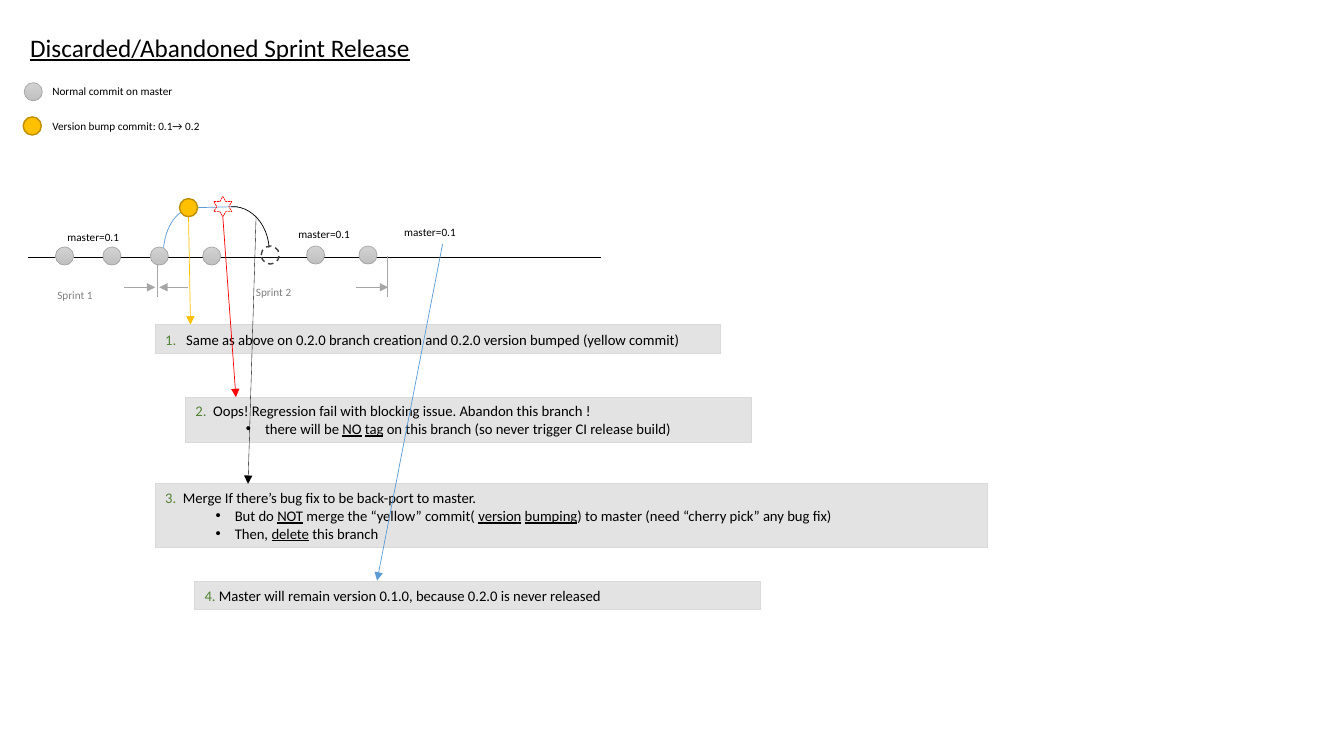
from pptx import Presentation
from pptx.dml.color import RGBColor
from pptx.enum.dml import MSO_LINE
from pptx.enum.shapes import MSO_CONNECTOR, MSO_SHAPE
from pptx.enum.text import MSO_ANCHOR, MSO_AUTO_SIZE, PP_ALIGN
from pptx.oxml.ns import qn
from pptx.util import Inches, Pt
from lxml.etree import SubElement

BLACK = RGBColor(0x00, 0x00, 0x00)
GRAY = RGBColor(0x80, 0x80, 0x80)
DARK = RGBColor(0x40, 0x40, 0x40)
MARK = RGBColor(0xA6, 0xA6, 0xA6)
RIM = RGBColor(0xA5, 0xA5, 0xA5)
LIGHT = RGBColor(0xD2, 0xD2, 0xD2)
SHADE = RGBColor(0xC0, 0xC0, 0xC0)
PANEL = RGBColor(0xCD, 0xCD, 0xCD)
EDGE = RGBColor(0xD9, 0xD9, 0xD9)
YELLOW = RGBColor(0xFF, 0xC0, 0x00)
AMBER = RGBColor(0xBD, 0x8E, 0x00)
BLUE = RGBColor(0x5B, 0x9B, 0xD5)
RED = RGBColor(0xFF, 0x00, 0x00)
GREEN = RGBColor(0x54, 0x82, 0x35)

deck = Presentation()
deck.slide_width, deck.slide_height = Inches(13.33), Inches(7.5)
slide = deck.slides.add_slide(deck.slide_layouts[5])
shapes = slide.shapes


def write(para, text, size, color=BLACK):
    """Add runs to a paragraph; words between underscores are underlined."""
    for i, part in enumerate(text.split("_")):
        if part:
            run = para.add_run()
            run.text = part
            run.font.name = "Calibri"
            run.font.size = Pt(size)
            run.font.color.rgb = color
            run.font.underline = i % 2 == 1


def draw(kind, box, color, width):
    """Add an unfilled outline shape without shadow."""
    shape = shapes.add_shape(kind, *map(Inches, box))
    shape.shadow.inherit = False
    shape.fill.background()
    shape.line.color.rgb = color
    shape.line.width = Pt(width)
    return shape


# Title
title = shapes.title
title.left, title.top = Inches(0.2), Inches(0.27)
title.width, title.height = Inches(4.29), Inches(0.4)
title.text_frame.vertical_anchor = MSO_ANCHOR.TOP
title.text_frame.auto_size = MSO_AUTO_SIZE.SHAPE_TO_FIT_TEXT
head = title.text_frame.paragraphs[0]
head.alignment = PP_ALIGN.LEFT
write(head, "_Discarded/Abandoned Sprint Release_", 18)

# Numbered steps: left, top, width, height, number, lines
steps = [
    (1.54, 3.22, 5.61, 0.29, "1.", [
        "   Same as above on 0.2.0 branch creation and 0.2.0 version bumped (yellow commit)"]),
    (1.84, 3.94, 5.61, 0.45, "2.  ", [
        "Oops! Regression fail with blocking issue. Abandon this branch !",
        "there will be _NO_ _tag_ on this branch (so never trigger CI release build)"]),
    (1.54, 4.8, 8.25, 0.63, "3. ", [
        " Merge If there’s bug fix to be back-port to master.",
        "But do _NOT_ merge the “yellow” commit( _version_ _bumping_) to master "
        "(need “cherry pick” any bug fix)",
        "Then, _delete_ this branch"]),
    (1.93, 5.77, 5.61, 0.28, "4. ", [
        "Master will remain version 0.1.0, because 0.2.0 is never released"]),
]
for *box, number, lines in steps:
    panel = draw(MSO_SHAPE.RECTANGLE, box, EDGE, 0.75)
    panel.fill.solid()
    panel.fill.fore_color.rgb = PANEL
    tint = panel.fill._xPr.find(".//" + qn("a:srgbClr"))
    SubElement(tint, qn("a:alpha"), val="54000")
    frame = panel.text_frame
    frame.word_wrap = True
    frame.auto_size = MSO_AUTO_SIZE.SHAPE_TO_FIT_TEXT
    for i, line in enumerate(lines):
        para = frame.add_paragraph() if i else frame.paragraphs[0]
        para.alignment = PP_ALIGN.LEFT
        if i:
            props = para._p.get_or_add_pPr()
            props.set("marL", str(Inches(0.69)))
            props.set("indent", str(Inches(-0.19)))
            SubElement(props, qn("a:buFont"), typeface="Arial")
            SubElement(props, qn("a:buChar"), char="•")
        else:
            write(para, number, 10.5, GREEN)
        write(para, line, 10.5)

# Lines: start x, start y, end x, end y, colour, width, arrowhead
links = [
    (0.28, 2.55, 5.96, 2.55, BLACK, 0.5, False),
    (1.56, 2.61, 1.56, 2.95, MARK, 0.5, False),
    (3.84, 2.54, 3.84, 2.95, MARK, 0.5, False),
    (1.23, 2.85, 1.54, 2.85, MARK, 0.5, True),
    (3.53, 2.85, 3.85, 2.85, MARK, 0.5, True),
    (1.86, 2.85, 1.58, 2.85, MARK, 0.5, True),
    (1.96, 2.06, 2.36, 2.05, BLUE, 0.5, False),
    (1.87, 2.15, 1.89, 3.22, YELLOW, 0.5, True),
    (2.21, 2.15, 2.34, 3.94, RED, 0.5, True),
    (2.54, 2.15, 2.46, 4.8, BLACK, 0.25, True),
    (4.39, 2.42, 3.74, 5.76, BLUE, 0.5, True),
]
for *ends, color, width, arrow in links:
    link = shapes.add_connector(MSO_CONNECTOR.STRAIGHT, *map(Inches, ends))
    link.line.color.rgb = color
    link.line.width = Pt(width)
    if arrow:
        SubElement(link.line._get_or_add_ln(), qn("a:tailEnd"), type="triangle")
    SubElement(link._element.spPr, qn("a:effectLst"))

# Branch out and merge back
branch = draw(MSO_SHAPE.ARC, (1.46, 2.23, 0.86, 0.54), BLUE, 0.5)
branch.rotation = 272.9
merge = draw(MSO_SHAPE.ARC, (1.89, 2.13, 0.86, 0.7), BLACK, 0.5)
merge.rotation = 266.4
merge._element.spPr.xfrm.set("flipV", "1")

# Commits
DOT = 0.18
normal = [(0.55, 2.45), (1.02, 2.45), (1.49, 2.45), (2.01, 2.45),
          (3.04, 2.44), (3.56, 2.44), (0.24, 0.82)]
for x, y in normal:
    dot = draw(MSO_SHAPE.OVAL, (x, y, DOT, DOT), RIM, 0.5)
    dot.fill.gradient()
    dot.fill.gradient_angle = 270
    for stop, color in zip(dot.fill.gradient_stops, (LIGHT, SHADE)):
        stop.color.rgb = color
for x, y in [(1.78, 1.97), (0.23, 1.16)]:
    bump = draw(MSO_SHAPE.OVAL, (x, y, DOT, DOT), AMBER, 1)
    bump.fill.solid()
    bump.fill.fore_color.rgb = YELLOW
ghost = draw(MSO_SHAPE.OVAL, (2.59, 2.44, DOT, DOT), DARK, 1)
ghost.line.dash_style = MSO_LINE.DASH
star = draw(MSO_SHAPE.STAR_6_POINT, (2.12, 1.95, DOT, 0.2), RED, 0.5)
star.line.dash_style = MSO_LINE.SQUARE_DOT

# Labels
labels = [
    (0.42, 0.79, 2.02, "Normal commit on master", BLACK),
    (0.42, 1.13, 2.02, "Version bump commit: 0.1→ 0.2", BLACK),
    (0.57, 2.24, 0.95, "master=0.1", BLACK),
    (2.86, 2.21, 0.95, "master=0.1", BLACK),
    (3.91, 2.19, 0.95, "master=0.1", BLACK),
    (0.47, 2.81, 0.7, "Sprint 1", GRAY),
    (2.44, 2.78, 0.7, "Sprint 2", GRAY),
]
for x, y, width, text, color in labels:
    label = shapes.add_textbox(Inches(x), Inches(y), Inches(width), Inches(0.24))
    label.text_frame.word_wrap = True
    label.text_frame.auto_size = MSO_AUTO_SIZE.SHAPE_TO_FIT_TEXT
    write(label.text_frame.paragraphs[0], text, 8, color)

deck.save("out.pptx")
